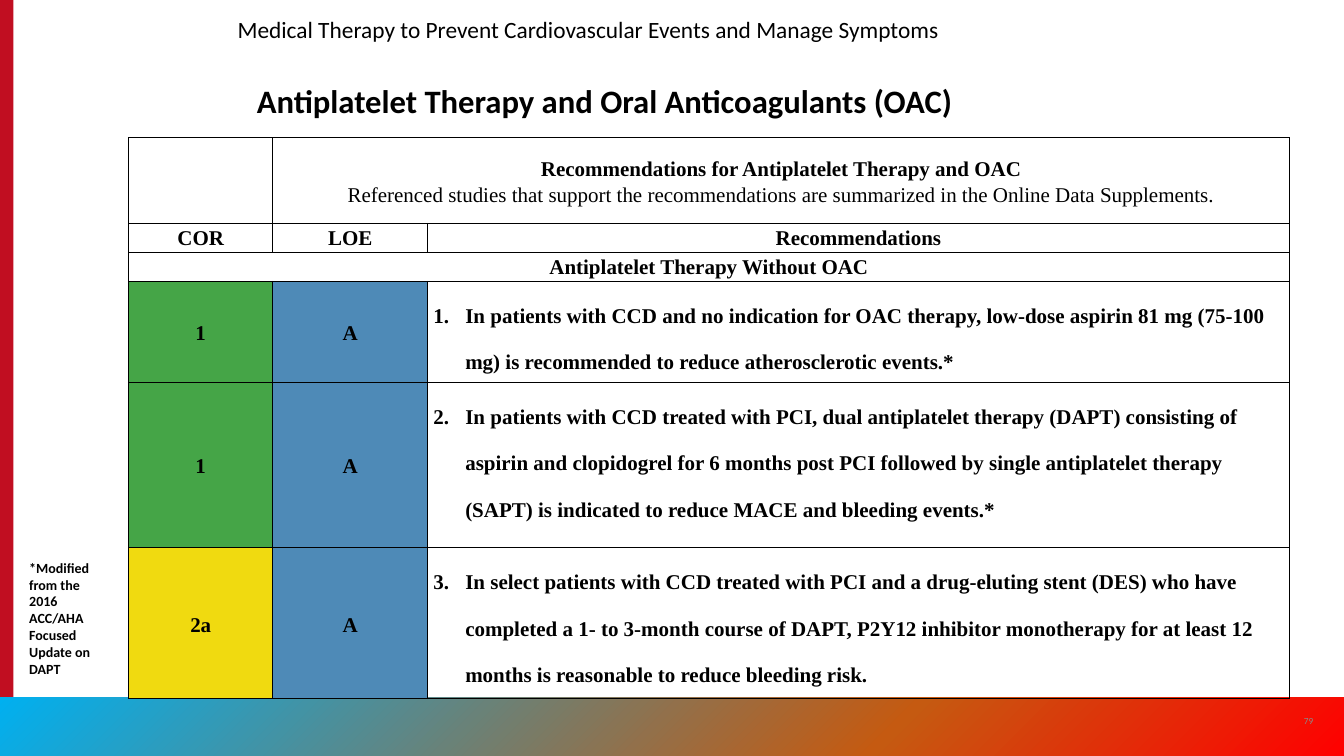
"""Build the slide on antiplatelet therapy and oral anticoagulants."""
from lxml.etree import SubElement
from pptx import Presentation
from pptx.dml.color import RGBColor
from pptx.enum.shapes import MSO_SHAPE
from pptx.enum.text import MSO_ANCHOR, PP_ALIGN
from pptx.oxml import parse_xml
from pptx.oxml.ns import nsdecls, qn
from pptx.util import Inches, Pt

COLS, ROWS = 16, 9
HUES = {
    "black": "000000", "crimson": "C10E21", "gray": "8A8B8A",
    "sky": "00B0F0", "rust": "C55A11", "red": "FF0000",
    "1": "45A547", "2a": "F0DA10", "A": "4E8AB7",
}
WIDTHS = [1.72, 1.84, 10.26]
HEIGHTS = [1.02, 0.32, 0.32, 1.12, 1.97, 1.73]
ADVICE = [
    ("1", "A", "In patients with CCD and no indication for OAC therapy, low-dose aspirin 81 mg "
     "(75-100 mg) is recommended to reduce atherosclerotic events.*"),
    ("1", "A", "In patients with CCD treated with PCI, dual antiplatelet therapy (DAPT) consisting of "
     "aspirin and clopidogrel for 6 months post PCI followed by single antiplatelet therapy "
     "(SAPT) is indicated to reduce MACE and bleeding events.*"),
    ("2a", "A", "In select patients with CCD treated with PCI and a drug-eluting stent (DES) who have "
     "completed a 1- to 3-month course of DAPT, P2Y12 inhibitor monotherapy for at least 12 "
     "months is reasonable to reduce bleeding risk."),
]


def hue(name):
    return RGBColor.from_string(HUES[name])


def style(para, face, size, bold=False, color="black"):
    font = para.font
    font.name, font.size, font.bold = face, Pt(size), bold
    font.color.rgb = hue(color)


def add_bar(slide, place):
    bar = slide.shapes.add_shape(MSO_SHAPE.RECTANGLE, *map(Inches, place))
    bar.shadow.inherit = False
    bar.line.fill.background()
    return bar


def add_blend(bar, stops, angle):
    marks = "".join(
        f'<a:gs pos="{share * 1000}"><a:srgbClr val="{HUES[name]}"/></a:gs>'
        for share, name in stops)
    bar.fill.background()
    blank = bar.fill._xPr.find(qn("a:noFill"))
    blank.getparent().replace(blank, parse_xml(
        f'<a:gradFill rotWithShape="1" {nsdecls("a")}><a:gsLst>{marks}</a:gsLst>'
        f'<a:lin ang="{angle * 60000}" scaled="0"/></a:gradFill>'))


def add_text(slide, place, text, size, bold=False, color="black", lead=None):
    frame = slide.shapes.add_textbox(*map(Inches, place)).text_frame
    frame.word_wrap = True
    para = frame.paragraphs[0]
    para.text = text
    para.line_spacing = lead
    style(para, "Calibri", size, bold, color)
    return frame


def add_edges(cell):
    props = cell._tc.get_or_add_tcPr()
    for side in ("lnL", "lnR", "lnT", "lnB"):
        edge = SubElement(props, qn(f"a:{side}"), w=str(Pt(1)))
        fill = SubElement(edge, qn("a:solidFill"))
        SubElement(fill, qn("a:srgbClr"), val=HUES["black"])


def fill_cell(cell, lines, middle=False, number=None):
    cell.margin_left = cell.margin_right = Inches(0.07)
    cell.margin_top = cell.margin_bottom = 0
    cell.vertical_anchor = MSO_ANCHOR.MIDDLE if middle else MSO_ANCHOR.TOP
    cell.text_frame.text = "\n".join(lines)
    for index, para in enumerate(cell.text_frame.paragraphs):
        if number:
            props = para._p.get_or_add_pPr()
            props.set("marL", str(Inches(0.38)))
            props.set("indent", str(-Inches(0.38)))
            SubElement(props, qn("a:buAutoNum"), type="arabicPeriod", startAt=str(number))
        else:
            para.alignment = PP_ALIGN.CENTER
        para.line_spacing = 2.0 if number else 1.15
        style(para, "Times New Roman", 18, bold=index == 0)


def add_grid(slide):
    place = (1.53, 1.64, sum(WIDTHS), sum(HEIGHTS))
    grid = slide.shapes.add_table(len(HEIGHTS), len(WIDTHS), *map(Inches, place)).table
    grid.first_row = grid.horz_banding = False
    for col, width in zip(grid.columns, WIDTHS):
        col.width = Inches(width)
    for row, height in zip(grid.rows, HEIGHTS):
        row.height = Inches(height)
    for cell in grid.iter_cells():
        add_edges(cell)
        cell.fill.background()
    grid.cell(0, 1).merge(grid.cell(0, 2))
    grid.cell(2, 0).merge(grid.cell(2, 2))
    fill_cell(grid.cell(0, 1), [
        "Recommendations for Antiplatelet Therapy and OAC",
        "Referenced studies that support the recommendations are summarized "
        "in the Online Data Supplements."], middle=True)
    for col, head in enumerate(("COR", "LOE", "Recommendations")):
        fill_cell(grid.cell(1, col), [head])
    fill_cell(grid.cell(2, 0), ["Antiplatelet Therapy Without OAC"])
    for number, (*grades, text) in enumerate(ADVICE, 1):
        row = number + 2
        for col, grade in enumerate(grades):
            cell = grid.cell(row, col)
            fill_cell(cell, [grade], middle=True)
            cell.fill.solid()
            cell.fill.fore_color.rgb = hue(grade)
        fill_cell(grid.cell(row, 2), [text], number=number)


def main():
    deck = Presentation()
    deck.slide_width, deck.slide_height = Inches(COLS), Inches(ROWS)
    slide = deck.slides.add_slide(deck.slide_layouts[6])
    side = add_bar(slide, (0, 0, 0.16, ROWS))
    side.fill.solid()
    side.fill.fore_color.rgb = hue("crimson")
    foot = add_bar(slide, (0, ROWS - 0.7, COLS, 0.7))
    add_blend(foot, [(0, "sky"), (66, "rust"), (100, "red")], 45)
    page = add_text(slide, (15.34, 8.34, 0.48, 0.48), "79", 8, color="gray")
    page.vertical_anchor = MSO_ANCHOR.MIDDLE
    page.paragraphs[0].alignment = PP_ALIGN.CENTER
    add_text(slide, (2.96, 0.97, 10.08, 0.68),
             "Antiplatelet Therapy and Oral Anticoagulants (OAC)", 28, bold=True, lead=0.9)
    add_grid(slide)
    add_text(slide, (0.25, 6.61, 1.17, 1.51),
             "*Modified from the 2016 ACC/AHA Focused Update on DAPT", 12, bold=True)
    add_text(slide, (2.73, 0.17, 10.54, 0.43),
             "Medical Therapy to Prevent Cardiovascular Events and Manage Symptoms", 20, lead=0.9)
    deck.save("out.pptx")


if __name__ == "__main__":
    main()
